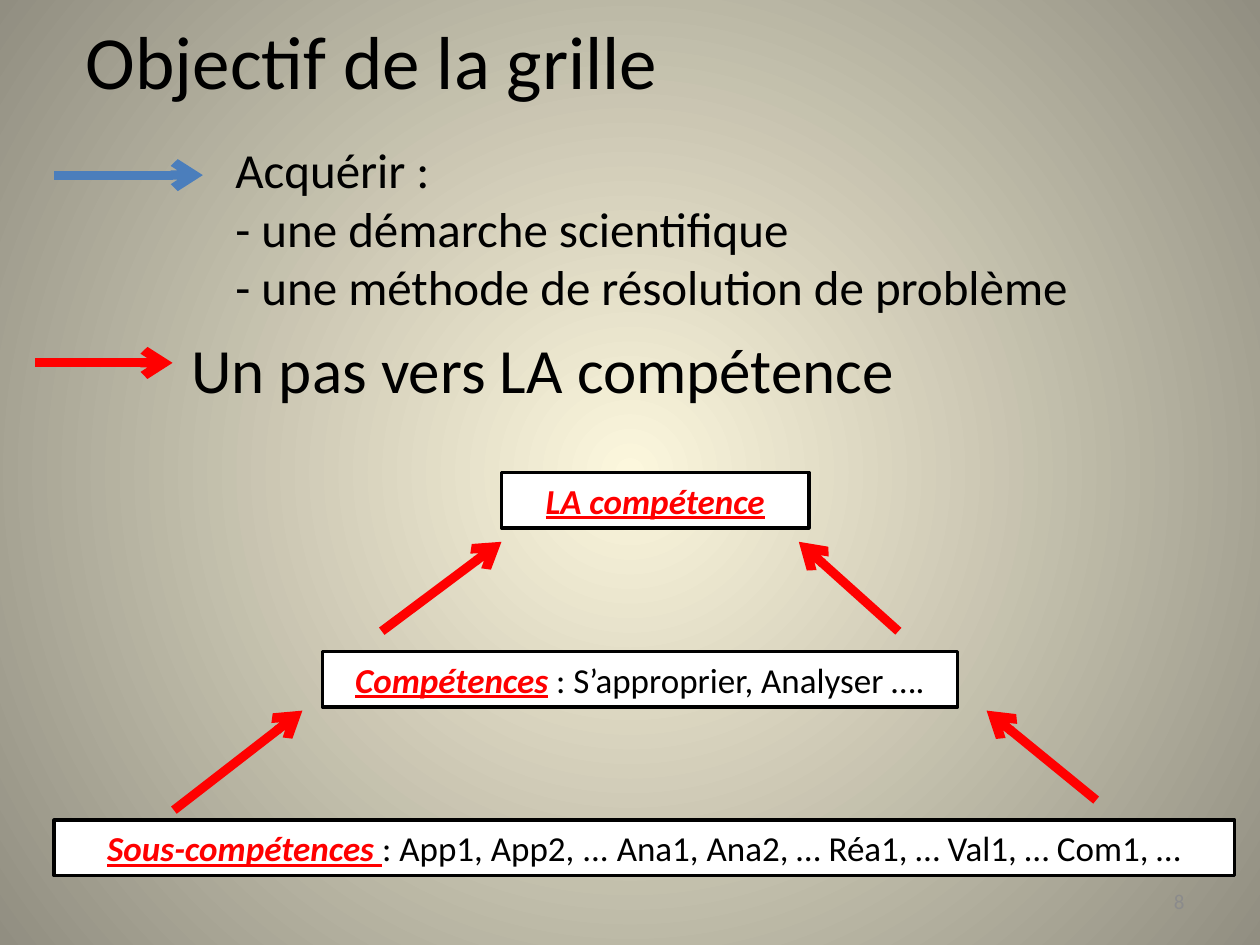
"""Build the slide on the aim of the skills grid."""
from lxml import etree
from pptx import Presentation
from pptx.dml.color import RGBColor
from pptx.enum.shapes import MSO_CONNECTOR, MSO_SHAPE
from pptx.enum.text import MSO_ANCHOR, PP_ALIGN
from pptx.oxml.ns import qn
from pptx.util import Inches, Pt

LEFT, MID, RIGHT = PP_ALIGN.LEFT, PP_ALIGN.CENTER, PP_ALIGN.RIGHT
CENTRE = MSO_ANCHOR.MIDDLE
RECT = MSO_SHAPE.RECTANGLE
LINE = MSO_CONNECTOR.STRAIGHT
BLACK, WHITE, RED, BLUE, GREY = "000000", "FFFFFF", "FF0000", "4B7EBC", "8B8B8B"
PLAIN = {"bold": False, "italic": False, "underline": False}
STRONG = {"bold": True, "italic": True, "underline": True}


def tint(color, code):
    color.rgb = RGBColor.from_string(code)


def write(shape, rows, size, align):
    frame = shape.text_frame
    frame.word_wrap = True
    frame.vertical_anchor = CENTRE
    for i, row in enumerate(rows):
        para = frame.add_paragraph() if i else frame.paragraphs[0]
        para.alignment = align
        for text, code, style in row:
            run = para.add_run()
            run.text = text
            look = {"name": "Calibri", "size": Pt(size), **style}
            for key, value in look.items():
                setattr(run.font, key, value)
            tint(run.font.color, code)


deck = Presentation()
deck.slide_width, deck.slide_height = Inches(10), Inches(7.5)
slide = deck.slides.add_slide(deck.slide_layouts[6])
shapes = slide.shapes

fill = slide.background.fill
fill.gradient()
for stop, code, place in zip(fill.gradient_stops, ("FCF7DD", "918E81"), (0, 1)):
    tint(stop.color, code)
    stop.position = place
grad = slide.element.find(".//" + qn("a:gradFill"))
grad.remove(grad.find(qn("a:lin")))
path = etree.SubElement(grad, qn("a:path"), path="circle")
etree.SubElement(path, qn("a:fillToRect"), l="50000", t="50000", r="50000", b="50000")

texts = [
    ((0.51, 0, 4.88, 0.94), ["Objectif de la grille"], 42.9, MID, BLACK),
    ((1.42, 2.57, 7.36, 0.71), ["Un pas vers LA compétence"], 36, LEFT, BLACK),
    ((1.77, 1.05, 7.17, 1.51),
     ["Acquérir :", "- une démarche scientifique",
      "- une méthode de résolution de problème"], 28, LEFT, BLACK),
    ((7.17, 6.95, 2.33, 0.4), ["8"], 12, RIGHT, GREY),
]
for place, rows, size, align, code in texts:
    box = shapes.add_textbox(*map(Inches, place))
    write(box, [[(row, code, PLAIN)] for row in rows], size, align)

levels = [
    ((0.43, 6.51, 9.37), "Sous-compétences ",
     ": App1, App2, ... Ana1, Ana2, … Réa1, … Val1, … Com1, …"),
    ((2.56, 5.17, 5.04), "Compétences", " : S’approprier, Analyser …."),
    ((3.98, 3.75, 2.44), "LA compétence", ""),
]
for place, name, rest in levels:
    box = shapes.add_shape(RECT, *map(Inches, (*place, 0.44)))
    box.shadow.inherit = False
    box.fill.solid()
    tint(box.fill.fore_color, WHITE)
    tint(box.line.color, BLACK)
    box.line.width = Pt(2)
    parts = [(name, RED, STRONG), (rest, BLACK, PLAIN)]
    write(box, [[part for part in parts if part[0]]], 20, MID)

arrows = [
    ((0.43, 1.39, 1.61, 1.39), BLUE),
    ((0.28, 2.88, 1.37, 2.88), RED),
    ((1.38, 6.43, 2.4, 5.64), RED),
    ((8.7, 6.35, 7.83, 5.64), RED),
    ((3.03, 5.01, 3.98, 4.3), RED),
    ((7.13, 5.01, 6.34, 4.3), RED),
]
for ends, code in arrows:
    arrow = shapes.add_connector(LINE, *map(Inches, ends))
    tint(arrow.line.color, code)
    arrow.line.width = Pt(5.25)
    etree.SubElement(arrow.line._get_or_add_ln(), qn("a:tailEnd"), type="arrow")
    props = arrow.element.find(qn("p:spPr"))
    etree.SubElement(props, qn("a:effectLst"))

deck.save("out.pptx")
